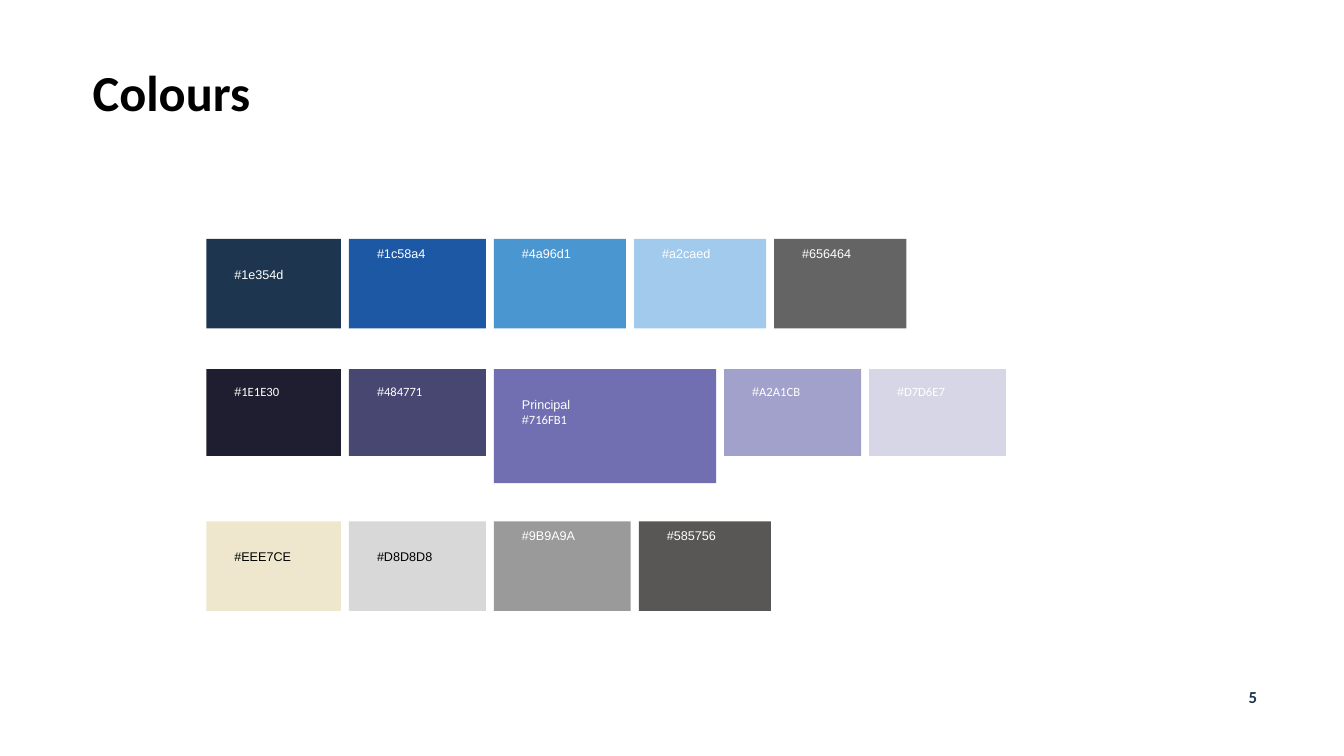
from dataclasses import dataclass

from pptx import Presentation
from pptx.dml.color import RGBColor
from pptx.enum.shapes import MSO_SHAPE
from pptx.enum.text import MSO_ANCHOR, MSO_AUTO_SIZE, PP_ALIGN
from pptx.util import Pt

WHITE = RGBColor(0xFF, 0xFF, 0xFF)
BLACK = RGBColor(0x00, 0x00, 0x00)
NAVY = RGBColor(0x1D, 0x34, 0x4D)
DARK_BLUE = RGBColor(0x1D, 0x35, 0x4E)
BLUE = RGBColor(0x1C, 0x58, 0xA4)
SKY_BLUE = RGBColor(0x4A, 0x96, 0xD1)
PALE_BLUE = RGBColor(0xA2, 0xCA, 0xED)
SLATE = RGBColor(0x65, 0x64, 0x64)
INK = RGBColor(0x1E, 0x1E, 0x30)
DARK_PURPLE = RGBColor(0x48, 0x47, 0x71)
PURPLE = RGBColor(0x71, 0x6F, 0xB1)
LILAC = RGBColor(0xA2, 0xA1, 0xCB)
PALE_LILAC = RGBColor(0xD7, 0xD6, 0xE7)
CREAM = RGBColor(0xEE, 0xE7, 0xCE)
LIGHT_GREY = RGBColor(0xD8, 0xD8, 0xD8)
GREY = RGBColor(0x9B, 0x9A, 0x9A)
DARK_GREY = RGBColor(0x58, 0x57, 0x56)

HEADING_FONT = "Calibri"
LABEL_FONT = "Arial"
LABEL_SIZE = 9

# Swatch grid, in points
LEFT, GAP, PADDING = 147.4, 5.7, 20
FIRST, WIDE, NARROW, PRINCIPAL = 96.2, 97.8, 94.4, 158.8
HIGH, SHORT, TALL = 64, 62, 81.5
NEAR_TOP, UPPER = 5, 10.5


@dataclass
class Swatch:
    label: str
    fill: RGBColor
    width: float
    height: float = HIGH
    label_top: float = NEAR_TOP
    color: RGBColor = WHITE
    code_font: str = LABEL_FONT


class SlideBuilder:
    def __init__(self, slide):
        self.slide = slide

    def format_run(self, run, font_name, size, color, bold=False):
        run.font.name = font_name
        run.font.size = Pt(size)
        run.font.color.rgb = color
        run.font.bold = bold

    def title(self, text, left, top, width, height):
        shape = self.slide.shapes.title
        shape.left, shape.top = Pt(left), Pt(top)
        shape.width, shape.height = Pt(width), Pt(height)
        frame = shape.text_frame
        frame.text = text
        frame.auto_size = MSO_AUTO_SIZE.NONE
        frame.vertical_anchor = MSO_ANCHOR.MIDDLE
        paragraph = frame.paragraphs[0]
        paragraph.alignment = PP_ALIGN.LEFT
        paragraph.line_spacing = 0.9
        self.format_run(paragraph.runs[0], HEADING_FONT, 36, BLACK, True)

    def page_number(self, text, left, top, width, height):
        shape = self.slide.shapes.add_textbox(Pt(left), Pt(top), Pt(width), Pt(height))
        frame = shape.text_frame
        frame.word_wrap = True
        frame.text = text
        paragraph = frame.paragraphs[0]
        paragraph.alignment = PP_ALIGN.CENTER
        self.format_run(paragraph.runs[0], HEADING_FONT, 12, NAVY, True)

    def swatch(self, swatch, left, top):
        shape = self.slide.shapes.add_shape(
            MSO_SHAPE.RECTANGLE, Pt(left), Pt(top), Pt(swatch.width), Pt(swatch.height))
        shape.shadow.inherit = False
        shape.fill.solid()
        shape.fill.fore_color.rgb = swatch.fill
        shape.line.fill.background()
        frame = shape.text_frame
        frame.word_wrap = True
        frame.vertical_anchor = MSO_ANCHOR.TOP
        frame.margin_left = frame.margin_right = Pt(PADDING)
        frame.margin_top, frame.margin_bottom = Pt(swatch.label_top), Pt(0)
        frame.text = swatch.label
        for paragraph in frame.paragraphs:
            paragraph.alignment = PP_ALIGN.LEFT
            # The code after the hash may use its own font
            first_run = paragraph.runs[0]
            if first_run.text.startswith("#") and swatch.code_font != LABEL_FONT:
                code_run = paragraph.add_run()
                code_run.text = first_run.text[1:]
                first_run.text = "#"
                self.format_run(code_run, swatch.code_font, LABEL_SIZE, swatch.color)
            self.format_run(first_run, LABEL_FONT, LABEL_SIZE, swatch.color)

    def swatch_row(self, top, swatches):
        left = LEFT
        for swatch in swatches:
            self.swatch(swatch, left, top)
            left += swatch.width + GAP


def purple_swatch(label, fill, width, height=SHORT, label_top=UPPER):
    return Swatch(label, fill, width, height, label_top, code_font=HEADING_FONT)


BLUES = [
    Swatch("#1e354d", DARK_BLUE, FIRST, label_top=PADDING),
    Swatch("#1c58a4", BLUE, WIDE),
    Swatch("#4a96d1", SKY_BLUE, NARROW),
    Swatch("#a2caed", PALE_BLUE, NARROW),
    Swatch("#656464", SLATE, NARROW),
]
PURPLES = [
    purple_swatch("#1E1E30", INK, FIRST),
    purple_swatch("#484771", DARK_PURPLE, WIDE),
    purple_swatch("Principal\n#716FB1", PURPLE, PRINCIPAL, TALL, PADDING),
    purple_swatch("#A2A1CB", LILAC, WIDE),
    purple_swatch("#D7D6E7", PALE_LILAC, WIDE),
]
NEUTRALS = [
    Swatch("#EEE7CE", CREAM, FIRST, label_top=PADDING, color=BLACK),
    Swatch("#D8D8D8", LIGHT_GREY, WIDE, label_top=PADDING, color=BLACK),
    Swatch("#9B9A9A", GREY, WIDE),
    Swatch("#585756", DARK_GREY, NARROW),
]


def main():
    presentation = Presentation()
    presentation.slide_width, presentation.slide_height = Pt(960), Pt(540)
    builder = SlideBuilder(presentation.slides.add_slide(presentation.slide_layouts[5]))

    # Heading and page number
    builder.title("Colours", 59, 44.6, 569.5, 46.8)
    builder.page_number("5", 859, 486.7, 72, 21.6)

    # Palette
    for top, swatches in ((170.6, BLUES), (263.6, PURPLES), (372.4, NEUTRALS)):
        builder.swatch_row(top, swatches)

    presentation.save("out.pptx")


if __name__ == "__main__":
    main()
